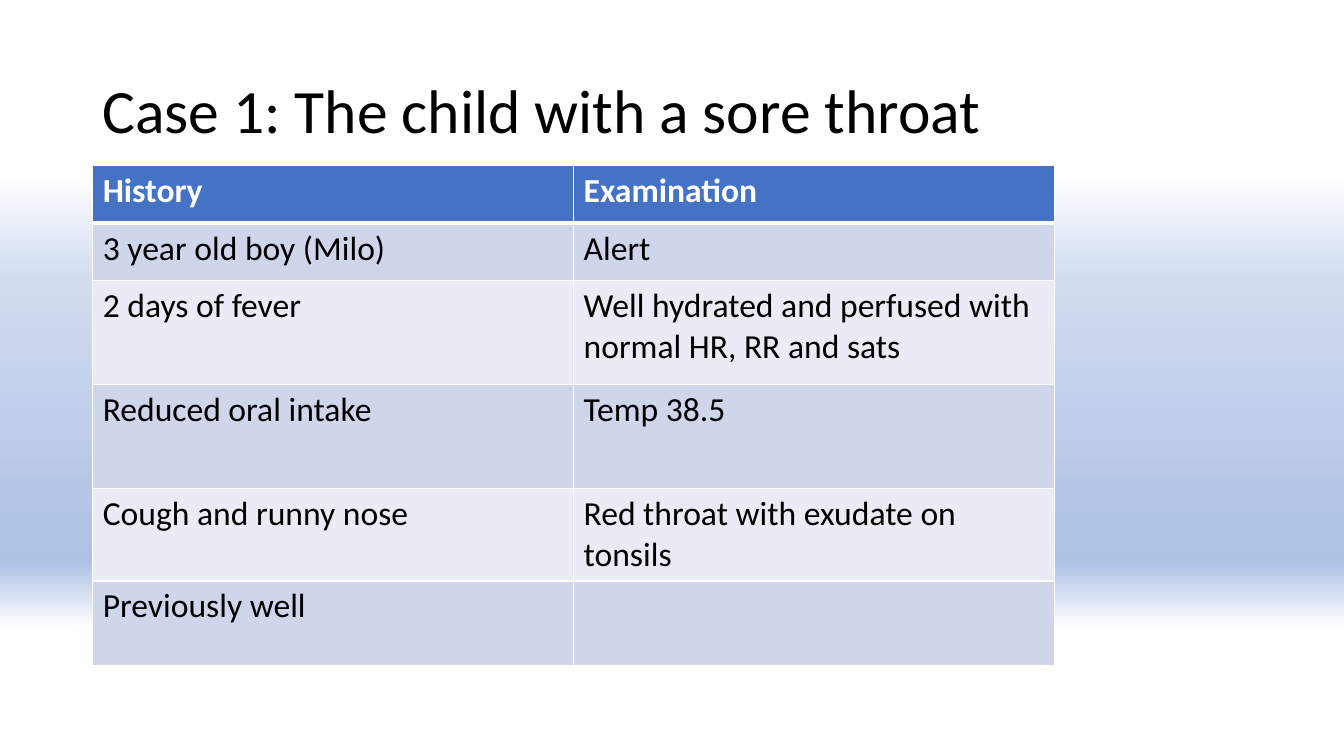
from lxml import etree
from pptx import Presentation
from pptx import util as u
from pptx.dml import color
from pptx.enum import text
from pptx.oxml import ns


def rgb(code):
    return color.RGBColor.from_string(code)


def write(frame, words, size=24, ink="000000", bold=False, lead=None):
    """Put one formatted, left-aligned paragraph in a text frame."""
    para = frame.paragraphs[0]
    para.alignment = text.PP_ALIGN.LEFT
    if lead:
        para.line_spacing = lead
    run = para.add_run()
    run.text = words
    font = run.font
    font.name, font.size, font.bold = "Calibri", u.Pt(size), bold
    font.color.rgb = rgb(ink)


def solid(parent, tag, code, **attrs):
    """Add an XML element that holds a colour."""
    node = etree.SubElement(parent, ns.qn(tag), **attrs)
    if tag != "a:gs":
        node = etree.SubElement(node, ns.qn("a:solidFill"))
    etree.SubElement(node, ns.qn("a:srgbClr"), val=code)


class Deck:
    head, bands, line = "4472C4", ("E9EBF5", "CFD5EA"), "FFFFFF"

    def __init__(self, wide, high):
        self.prs = Presentation()
        self.prs.slide_width, self.prs.slide_height = u.Pt(wide), u.Pt(high)
        self.slide = self.prs.slides.add_slide(self.prs.slide_layouts[5])

    def backdrop(self, stops):
        fill = self.slide.background.fill
        fill.gradient()
        fill.gradient_angle = 270
        group = self.slide.element.find(".//" + ns.qn("a:gsLst"))
        for old in list(group):
            group.remove(old)
        for place, code in stops:
            solid(group, "a:gs", code, pos=str(place * 1000))

    def title(self, words, left, top, wide, high):
        box = self.slide.shapes.title
        box.left, box.top = u.Pt(left), u.Pt(top)
        box.width, box.height = u.Pt(wide), u.Pt(high)
        frame = box.text_frame
        frame.word_wrap = True
        frame.auto_size = text.MSO_AUTO_SIZE.NONE
        frame.vertical_anchor = text.MSO_ANCHOR.MIDDLE
        write(frame, words, size=44, lead=0.9)

    def cell(self, cell, words, row):
        props = cell._tc.get_or_add_tcPr()
        thick = {0: "B", 1: "T"}.get(row)  # rule under the header
        for side in "LRTB":
            width = u.Pt(3 if side == thick else 1)
            solid(props, "a:ln" + side, self.line, w=str(width))
        cell.fill.solid()
        cell.fill.fore_color.rgb = rgb(self.bands[row % 2] if row else self.head)
        if words:
            write(cell.text_frame, words, bold=row == 0,
                  ink="000000" if row else "FFFFFF")

    def table(self, rows, highs, left, top, wide):
        grid = self.slide.shapes.add_table(
            len(rows), len(rows[0]), u.Pt(left), u.Pt(top),
            u.Pt(wide), u.Pt(sum(highs))).table
        grid.horz_banding = False
        for r, (row, high) in enumerate(zip(rows, highs)):
            grid.rows[r].height = u.Pt(high)
            for c, words in enumerate(row):
                self.cell(grid.cell(r, c), words, r)


def main():
    deck = Deck(960, 540)

    # Background
    deck.backdrop([
        (23, "FFFFFF"), (37, "D1DCF0"), (56, "BECEEA"), (65, "B5C7E7"),
        (69, "B0C4E6"), (72, "AEC2E5"), (73, "ADC1E5"), (74, "ABC0E4"),
        (83, "FFFFFF")])

    # Title
    deck.title("Case 1: The child with a sore throat", 66, 28.75, 672.5, 104.4)

    # Findings
    deck.table([
        ("History", "Examination"),
        ("3 year old boy (Milo)", "Alert"),
        ("2 days of fever",
         "Well hydrated and perfused with normal HR, RR and sats"),
        ("Reduced oral intake", "Temp 38.5"),
        ("Cough and runny nose", "Red throat with exudate on tonsils"),
        ("Previously well", ""),
    ], (41.2, 41.2, 74.3, 74.3, 60.5, 60.5), 66.25, 118.2, 687)

    deck.prs.save("out.pptx")


if __name__ == "__main__":
    main()
